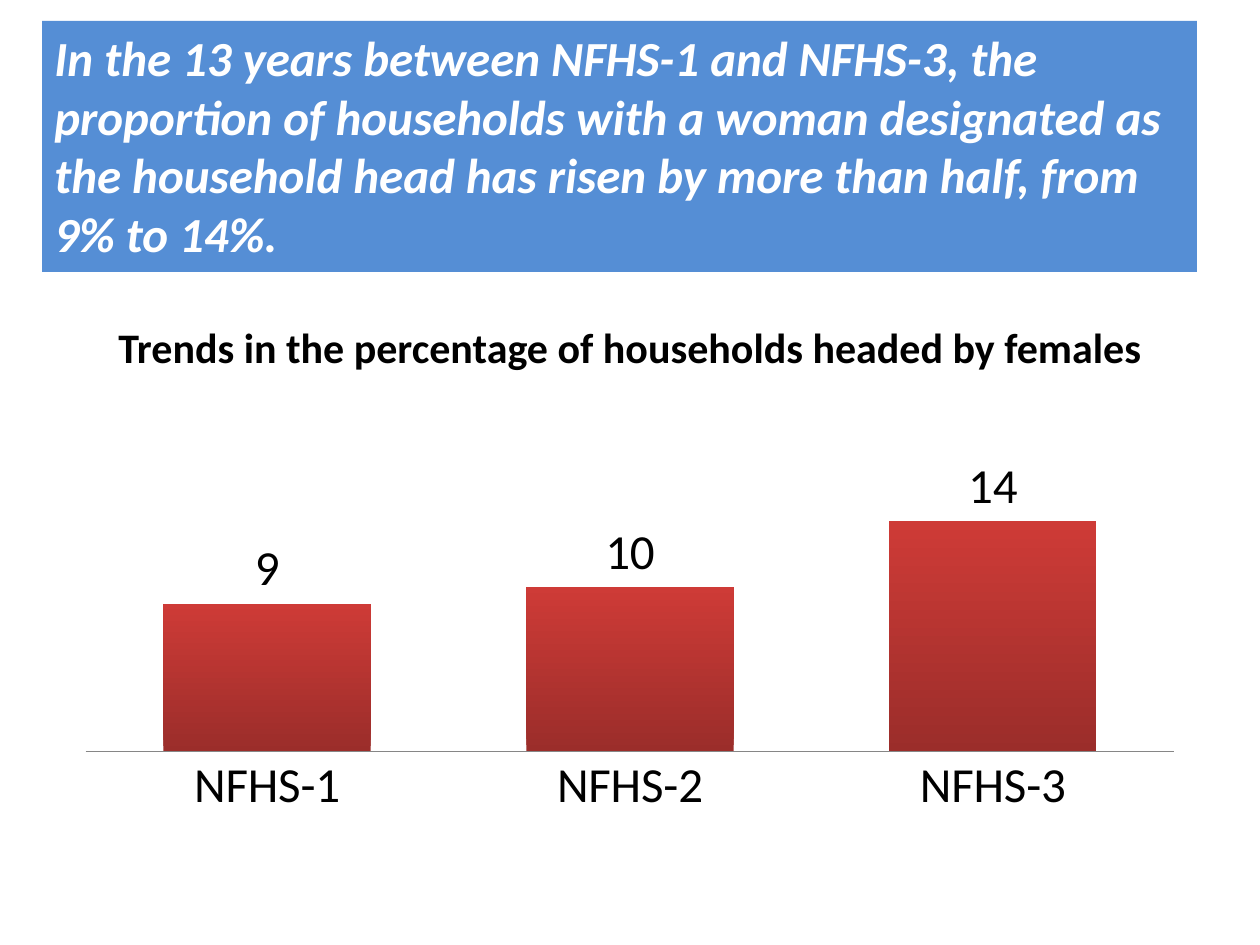
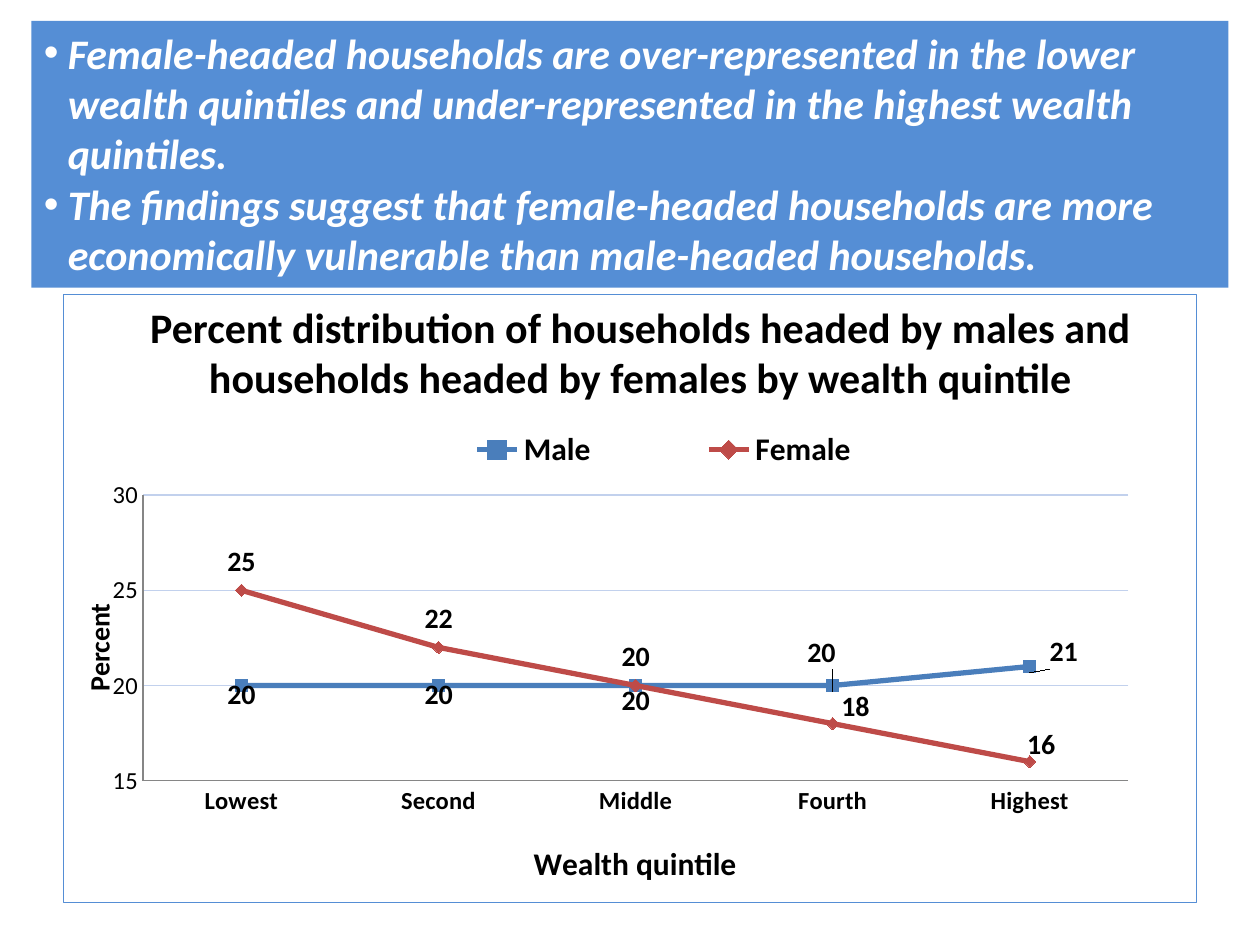
from dataclasses import dataclass
from typing import Any

from lxml import etree
from pptx import Presentation
from pptx.chart.data import CategoryChartData
from pptx.dml.color import RGBColor
from pptx.enum.chart import (XL_CHART_TYPE, XL_LABEL_POSITION, XL_LEGEND_POSITION,
                             XL_MARKER_STYLE, XL_TICK_MARK)
from pptx.enum.shapes import MSO_SHAPE
from pptx.enum.text import MSO_ANCHOR, PP_ALIGN
from pptx.oxml.ns import qn
from pptx.util import Inches, Pt

BARS, LINES = XL_CHART_TYPE.COLUMN_CLUSTERED, XL_CHART_TYPE.LINE_MARKERS
ABOVE, BELOW = XL_LABEL_POSITION.ABOVE, XL_LABEL_POSITION.BELOW
OUTER = XL_LABEL_POSITION.OUTSIDE_END
SQUARE, DIAMOND = XL_MARKER_STYLE.SQUARE, XL_MARKER_STYLE.DIAMOND
TOP_KEY, NO_TICK = XL_LEGEND_POSITION.TOP, XL_TICK_MARK.NONE
TOP, MIDDLE = MSO_ANCHOR.TOP, MSO_ANCHOR.MIDDLE
LEFT, CENTER = PP_ALIGN.LEFT, PP_ALIGN.CENTER
RECT = MSO_SHAPE.RECTANGLE

FONT = "Calibri"
CELL = Inches(1 / 12)
COLS, ROWS = 120, 90
HUES = {
    "band": "558ED5", "paper": "FFFFFF", "ink": "000000", "axis": "868686",
    "grid": "C2D1ED", "male": "4A7EBB", "female": "BE4B48",
    "bar_top": "CE3B37", "bar_base": "9B2D2A",
}


@dataclass(frozen=True)
class Box:
    col: float
    row: float
    wide: float
    high: float

    def area(self) -> tuple[int, ...]:
        return tuple(round(n * CELL) for n in (self.col, self.row, self.wide, self.high))


@dataclass(frozen=True)
class Trend:
    name: str
    vals: tuple[int, ...]
    hue: str
    mark: Any
    side: Any
    shifts: dict[int, tuple[float, float]]


TRENDS = (
    Trend("Male", (20, 20, 20, 20, 21), "male", SQUARE, BELOW,
          {0: (0, -0.03), 1: (0, -0.03), 2: (0, -0.02), 3: (-0.01, -0.1), 4: (0.03, -0.07)}),
    Trend("Female", (25, 22, 20, 18, 16), "female", DIAMOND, ABOVE,
          {3: (0.02, 0.02), 4: (0.01, 0.02)}),
)


def tint(hue: str) -> RGBColor:
    return RGBColor.from_string(HUES[hue])


def style(font: Any, size: float, hue: str = "ink", bold: bool = True) -> None:
    font.name, font.size, font.bold = FONT, Pt(size), bold
    font.color.rgb = tint(hue)


def stroke(line: Any, hue: str, width: float = 0.75) -> None:
    line.color.rgb = tint(hue)
    line.width = Pt(width)


def draw_title(slide: Any, box: Box, text: str) -> None:
    frame = slide.shapes.add_textbox(*box.area()).text_frame
    frame.word_wrap = True
    frame.vertical_anchor = MIDDLE
    frame.text = text
    frame.paragraphs[0].alignment = CENTER
    style(frame.paragraphs[0].runs[0].font, 24)


def draw_band(slide: Any, box: Box, lines: tuple[str, ...], size: float,
              dots: bool = False) -> None:
    band = slide.shapes.add_shape(RECT, *box.area())
    band.shadow.inherit = False
    band.fill.solid()
    band.fill.fore_color.rgb = tint("band")
    band.line.fill.background()
    frame = band.text_frame
    frame.word_wrap = True
    frame.vertical_anchor = TOP
    frame.text = "\n".join(lines)
    for para in frame.paragraphs:
        para.alignment = LEFT
        if dots:
            props = para._p.get_or_add_pPr()
            props.set("marL", str(Inches(0.19)))
            props.set("indent", str(-Inches(0.19)))
            etree.SubElement(props, qn("a:buFont"), typeface="Arial")
            etree.SubElement(props, qn("a:buChar"), char="•")
        style(para.runs[0].font, size, "paper")
        para.runs[0].font.italic = True


def place(node: Any, index: int, **marks: Any) -> None:
    for old in node.findall(qn("c:layout")):
        node.remove(old)
    layout = etree.Element(qn("c:layout"))
    manual = etree.SubElement(layout, qn("c:manualLayout"))
    for tag, val in marks.items():
        etree.SubElement(manual, qn(f"c:{tag}"), val=str(val))
    node.insert(index, layout)


def pin(node: Any, index: int, x: float, y: float) -> None:
    place(node, index, xMode="edge", yMode="edge", x=x, y=y)


def add_chart(slide: Any, kind: Any, box: Box, cats: tuple[str, ...],
              rows: dict[str, tuple[int, ...]], size: float,
              plot: tuple[float, ...]) -> Any:
    data = CategoryChartData(number_format="0")
    data.categories = cats
    for name, vals in rows.items():
        data.add_series(name, vals)
    chart = slide.shapes.add_chart(kind, *box.area(), data).chart
    style(chart.font, size, bold=False)
    chart.has_title = chart.has_legend = False
    chart.plots[0].vary_by_categories = False
    x, y, w, h = plot
    place(chart.element.xpath(".//c:plotArea")[0], 0, layoutTarget="inner",
          xMode="edge", yMode="edge", x=x, y=y, w=w, h=h)
    for axis in (chart.category_axis, chart.value_axis):
        axis.major_tick_mark = axis.minor_tick_mark = NO_TICK
        axis.has_major_gridlines = False
        stroke(axis.format.line, "axis")
    return chart


def draw_bars(slide: Any, box: Box) -> None:
    chart = add_chart(slide, BARS, box, ("NFHS-1", "NFHS-2", "NFHS-3"),
                      {"Series 1": (9, 10, 14)}, 28, (0.02, 0.27, 0.96, 0.54))
    axis = chart.value_axis
    axis.visible = False
    axis.minimum_scale, axis.maximum_scale = 0, 16
    plot = chart.plots[0]
    plot.gap_width, plot.overlap = 75, -5
    plot.has_data_labels = True
    tags = plot.data_labels
    tags.show_value = True
    tags.position = OUTER
    style(tags.font, 28, bold=False)
    bars = plot.series[0]
    bars.invert_if_negative = False
    fill = bars.format.fill
    fill.gradient()
    fill.gradient_angle = 90
    for stop, hue, spot in zip(fill.gradient_stops, ("bar_base", "bar_top"), (0, 1)):
        stop.color.rgb = tint(hue)
        stop.position = spot


def name_axis(axis: Any, text: str, size: float) -> None:
    frame = axis.axis_title.text_frame
    frame.text = text
    style(frame.paragraphs[0].runs[0].font, size)


def draw_trend(line: Any, trend: Trend) -> None:
    line.smooth = False
    stroke(line.format.line, trend.hue, 3)
    line.marker.style, line.marker.size = trend.mark, 7
    line.marker.format.fill.solid()
    line.marker.format.fill.fore_color.rgb = tint(trend.hue)
    stroke(line.marker.format.line, trend.hue)
    tags = line.data_labels
    tags.show_value = True
    tags.position = trend.side
    tags.number_format, tags.number_format_is_linked = "0", False
    style(tags.font, 16)
    for spot, (x, y) in trend.shifts.items():
        tag = line.points[spot].data_label
        style(tag.font, 16)
        tag.position = trend.side
        node = line._element.xpath(f'.//c:dLbl[c:idx/@val="{spot}"]')[0]
        place(node, 1, x=x, y=y)


def draw_lines(slide: Any, box: Box) -> None:
    chart = add_chart(slide, LINES, box,
                      ("Lowest", "Second", "Middle", "Fourth", "Highest"),
                      {trend.name: trend.vals for trend in TRENDS}, 10,
                      (0.07, 0.33, 0.87, 0.47))
    cats, vals = chart.category_axis, chart.value_axis
    style(cats.tick_labels.font, 14)
    style(vals.tick_labels.font, 14, bold=False)
    vals.minimum_scale, vals.maximum_scale, vals.major_unit = 15, 30, 5
    vals.has_major_gridlines = True
    stroke(vals.major_gridlines.format.line, "grid")
    name_axis(cats, "Wealth quintile", 18)
    name_axis(vals, "Percent", 16)
    root = chart.element
    pin(root.xpath(".//c:catAx/c:title")[0], 1, 0.41, 0.89)
    pin(root.xpath(".//c:valAx/c:title")[0], 1, 0.01, 0.5)
    root.xpath(".//c:valAx/c:title//a:bodyPr")[0].set("rot", "-5400000")
    chart.has_legend = True
    chart.legend.position = TOP_KEY
    chart.legend.include_in_layout = False
    style(chart.legend.font, 18)
    place(root.xpath(".//c:legend")[0], 1, xMode="edge", yMode="edge",
          x=0.27, y=0.22, w=0.52, h=0.07)
    for line, trend in zip(chart.plots[0].series, TRENDS):
        draw_trend(line, trend)
    props = etree.Element(qn("c:spPr"))
    edge = etree.SubElement(props, qn("a:ln"), w=str(Pt(0.75)))
    fill = etree.SubElement(edge, qn("a:solidFill"))
    etree.SubElement(fill, qn("a:srgbClr"), val=HUES["band"])
    root.find(qn("c:chart")).addnext(props)


def main() -> None:
    deck = Presentation()
    deck.slide_width, deck.slide_height = COLS * CELL, ROWS * CELL
    blank = deck.slide_layouts[6]

    slide = deck.slides.add_slide(blank)
    draw_title(slide, Box(6, 28, 108, 10),
               "Trends in the percentage of households headed by females")
    draw_bars(slide, Box(6, 34, 108, 46.4))
    draw_band(slide, Box(4, 2, 110, 23.9), (
        "In the 13 years between NFHS-1 and NFHS-3, the proportion of households "
        "with a woman designated as the household head has risen by more than half, "
        "from 9% to 14%.",), 28)

    slide = deck.slides.add_slide(blank)
    draw_lines(slide, Box(6, 28, 108, 58))
    draw_title(slide, Box(7, 28, 108, 11),
               "Percent distribution of households headed by males and "
               "households headed by females by wealth quintile")
    draw_band(slide, Box(3, 2, 114, 25.4), (
        "Female-headed households are over-represented in the lower wealth quintiles "
        "and under-represented in the highest wealth quintiles.",
        "The findings suggest that female-headed households are more economically "
        "vulnerable than male-headed households."), 24, dots=True)
    deck.save("out.pptx")


if __name__ == "__main__":
    main()
